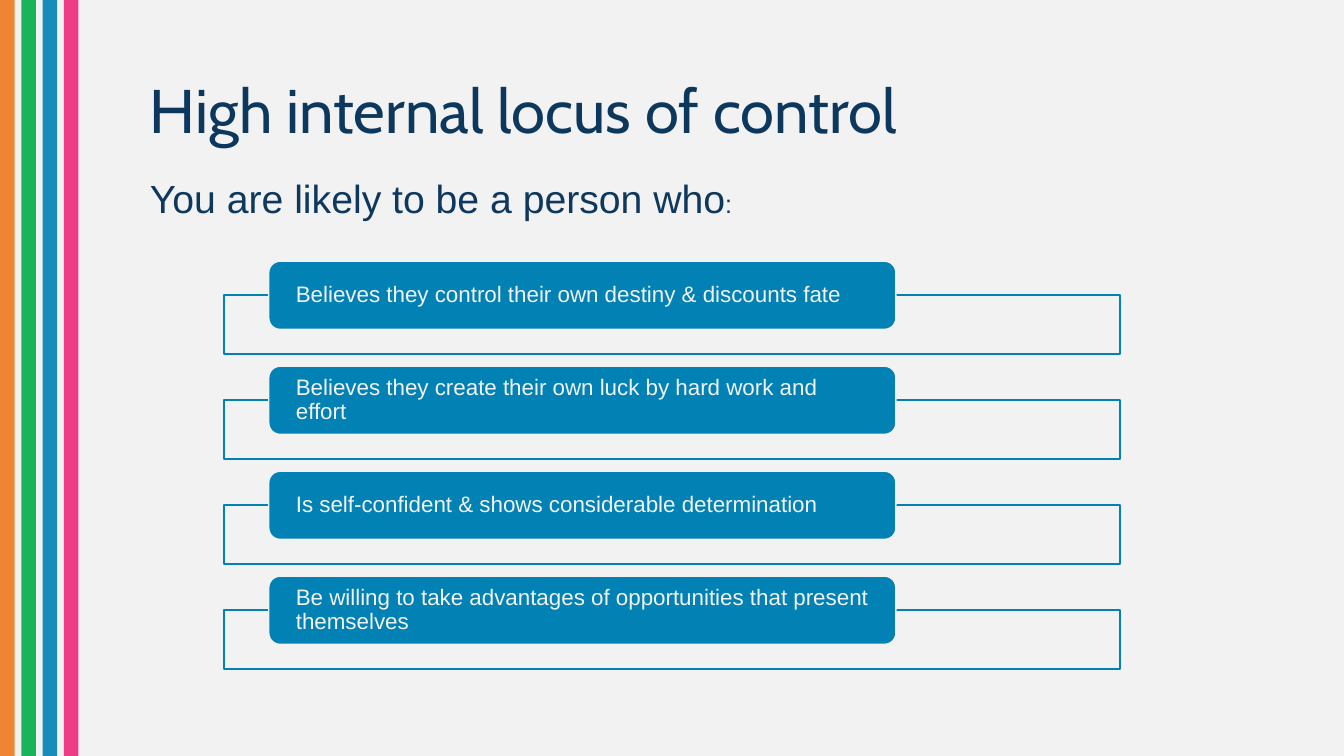
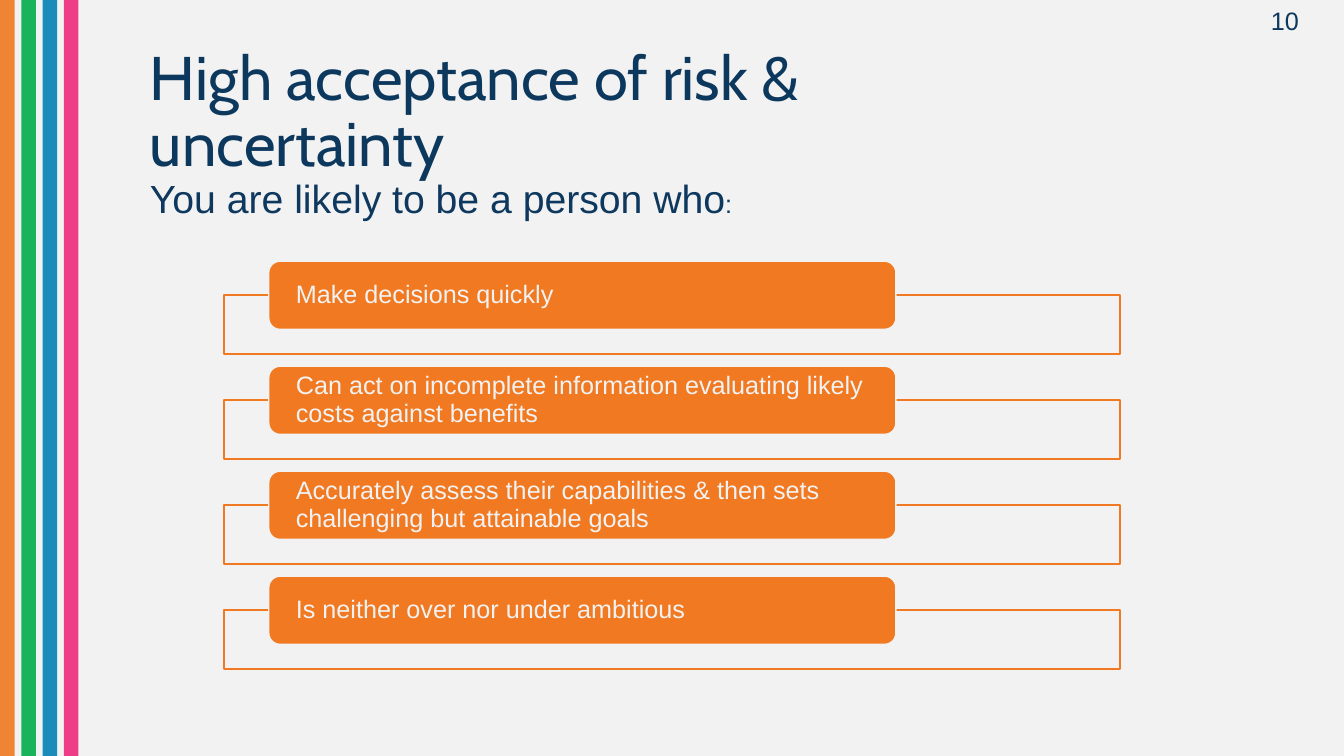
from lxml.etree import SubElement
from pptx import Presentation
from pptx.dml.color import RGBColor
from pptx.enum.shapes import MSO_SHAPE
from pptx.enum.text import MSO_ANCHOR, PP_ALIGN
from pptx.oxml.ns import qn
from pptx.util import Pt

COLORS = {
    "paper": "F2F2F2",
    "navy": "0D385E",
    "ink": "0E385E",
    "orange": "F07921",
    "green": "01AD4B",
    "blue": "0281B4",
    "pink": "EE297B",
}
SIZE = (960, 540)
BANDS = ("orange", "green", "blue", "pink")
LEAD = "You are likely to be a person who"
SLIDES = [
    {
        "title": "High internal locus of control",
        "color": "blue",
        "size": 16,
        "items": [
            "Believes they control their own destiny & discounts fate",
            "Believes they create their own luck by hard work and effort",
            "Is self-confident & shows considerable determination",
            "Be willing to take advantages of opportunities that present themselves",
        ],
    },
    {
        "title": "High acceptance of risk & uncertainty",
        "color": "orange",
        "size": 18,
        "number": "10",
        "items": [
            "Make decisions quickly",
            "Can act on incomplete information evaluating likely costs against benefits",
            "Accurately assess their capabilities & then sets challenging but attainable goals",
            "Is neither over nor under ambitious",
        ],
    },
]


def tint(name):
    return RGBColor.from_string(COLORS[name])


def write(frame, text, *, size, color="ink", font="Arial", space=1.0):
    line = frame.paragraphs[0]
    line.alignment = PP_ALIGN.LEFT
    line.line_spacing = space
    run = line.add_run()
    run.text = text
    run.font.name = font
    run.font.size = Pt(size)
    run.font.color.rgb = tint(color)


class Deck:
    """Hold the shared style and the current slide."""

    def __init__(self):
        self.show = Presentation()
        self.show.slide_width, self.show.slide_height = map(Pt, SIZE)
        self.slide = None

    def start(self):
        self.slide = self.show.slides.add_slide(self.show.slide_layouts[6])
        back = self.slide.background.fill
        back.solid()
        back.fore_color.rgb = tint("paper")
        for i, color in enumerate(BANDS):
            self.shape((15.2 * i, 0, 10.4, SIZE[1]), color, alpha=90)

    def shape(self, area, fill, line=None, kind=MSO_SHAPE.RECTANGLE, alpha=100):
        item = self.slide.shapes.add_shape(kind, *map(Pt, area))
        item.shadow.inherit = False
        item.fill.solid()
        item.fill.fore_color.rgb = tint(fill)
        if alpha < 100:
            node = item._element.spPr.find(".//" + qn("a:srgbClr"))
            SubElement(node, qn("a:alpha"), val=str(alpha * 1000))
        if line:
            item.line.color.rgb = tint(line)
            item.line.width = Pt(1)
        else:
            item.line.fill.background()
        return item

    def box(self, area, anchor=MSO_ANCHOR.TOP):
        frame = self.slide.shapes.add_textbox(*map(Pt, area)).text_frame
        frame.word_wrap = True
        frame.vertical_anchor = anchor
        return frame

    def title(self, text):
        frame = self.box((100, 28.8, 630.7, 104.4), MSO_ANCHOR.MIDDLE)
        write(frame, text, size=44, color="navy", font="Cabin", space=0.9)

    def lead(self, text):
        frame = self.box((100, 121, 558.7, 41))
        write(frame, text, size=28)
        write(frame, ":", size=18)

    def number(self, text):
        write(self.box((900.7, 0, 59, 29)), text, size=18)

    def card(self, top, text, color, size):
        self.shape((160, top + 24.2, 640, 42), "paper", color, alpha=90)
        label = self.shape((192, top, 448, 48.7), color, "paper",
                           MSO_SHAPE.ROUNDED_RECTANGLE)
        frame = label.text_frame
        frame.word_wrap = True
        frame.vertical_anchor = MSO_ANCHOR.MIDDLE
        frame.margin_left = frame.margin_right = Pt(17)
        frame.margin_top = frame.margin_bottom = 0
        write(frame, text, size=size, color="paper", space=0.9)

    def cards(self, items, color, size):
        for i, text in enumerate(items):
            self.card(186.6 + 75 * i, text, color, size)


def main():
    deck = Deck()
    for page in SLIDES:
        deck.start()
        deck.title(page["title"])
        if "number" in page:
            deck.number(page["number"])
        deck.lead(LEAD)
        deck.cards(page["items"], page["color"], page["size"])
    deck.show.save("out.pptx")


if __name__ == "__main__":
    main()
